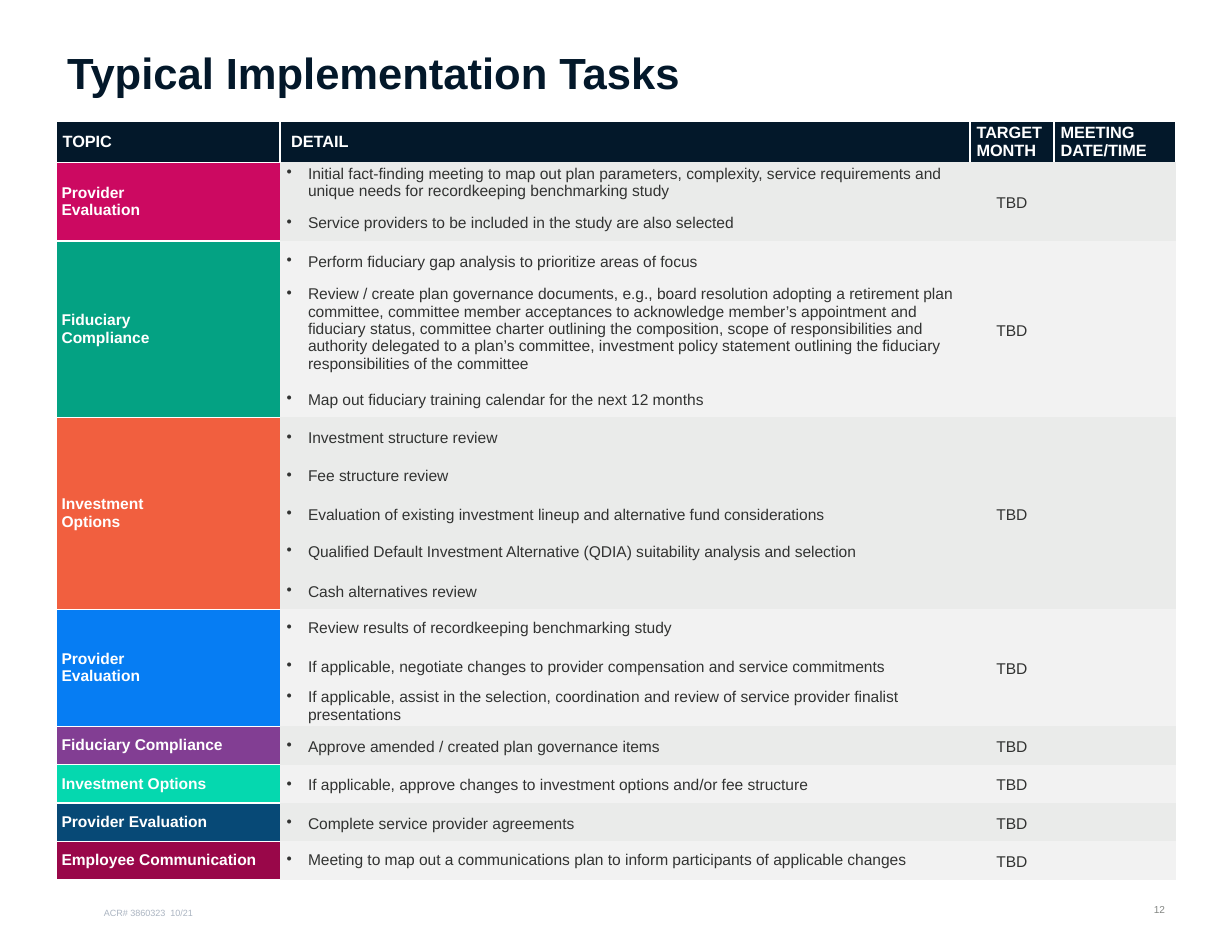
from dataclasses import dataclass

from lxml.etree import SubElement
from pptx import Presentation
from pptx.dml.color import RGBColor
from pptx.enum.text import MSO_ANCHOR, PP_ALIGN
from pptx.oxml.ns import qn
from pptx.util import Inches, Pt


@dataclass(frozen=True)
class Theme:
    font: str = "Arial"
    navy: str = "03182A"
    white: str = "FFFFFF"
    body: str = "323332"
    page: str = "838683"
    footer: str = "AAB4C1"
    bands: tuple = ("EAEBEA", "F2F2F2")
    title_size: float = 28
    header_size: float = 10.5
    body_size: float = 10
    page_size: float = 6.5
    footer_size: float = 5.8


THEME = Theme()
NO_STYLE = "{2D5ABB26-0587-4C30-8999-92F81FD0307C}"
HEADERS = ("TOPIC", "DETAIL", "TARGET MONTH", "MEETING DATE/TIME")
COLUMN_WIDTHS = (2, 6.16, 0.75, 1.09)
HEADER_HEIGHT = 0.37
SINGLE, LOOSE = 1.0, 1.2

# Topic, colour, and its details: text, line spacing and, for a tall row, its height
TASKS = [
    ("Provider\nEvaluation", "CC0961", [
        ("Initial fact-finding meeting to map out plan parameters, complexity, service "
         "requirements and unique needs for recordkeeping benchmarking study", SINGLE, 0.36),
        ("Service providers to be included in the study are also selected", LOOSE),
    ]),
    ("Fiduciary\nCompliance", "04A283", [
        ("Perform fiduciary gap analysis to prioritize areas of focus", LOOSE),
        ("Review / create plan governance documents, e.g., board resolution adopting a "
         "retirement plan committee, committee member acceptances to acknowledge member’s "
         "appointment and fiduciary status, committee charter outlining the composition, "
         "scope of responsibilities and authority delegated to a plan’s committee, "
         "investment policy statement outlining the fiduciary responsibilities of the "
         "committee", SINGLE, 0.89),
        ("Map out fiduciary training calendar for the next 12 months", LOOSE),
    ]),
    ("Investment\nOptions", "F15F3F", [
        ("Investment structure review", LOOSE),
        ("Fee structure review", LOOSE),
        ("Evaluation of existing investment lineup and alternative fund considerations", LOOSE),
        ("Qualified Default Investment Alternative (QDIA) suitability analysis and selection",
         SINGLE),
        ("Cash alternatives review", LOOSE),
    ]),
    ("Provider\nEvaluation", "067DF3", [
        ("Review results of recordkeeping benchmarking study", SINGLE),
        ("If applicable, negotiate changes to provider compensation and service commitments",
         SINGLE),
        ("If applicable, assist in the selection, coordination and review of service provider "
         "finalist presentations", SINGLE, 0.36),
    ]),
    ("Fiduciary Compliance", "823E93", [
        ("Approve amended / created plan governance items", LOOSE)]),
    ("Investment Options", "05D8AF", [
        ("If applicable, approve changes to investment options and/or fee structure", LOOSE)]),
    ("Provider Evaluation", "074976", [("Complete service provider agreements", LOOSE)]),
    ("Employee Communication", "990749", [
        ("Meeting to map out a communications plan to inform participants of applicable changes",
         SINGLE)]),
]


def apply(target, **values):
    for name, value in values.items():
        setattr(target, name, value)


def write(frame, text, size, color, bold=False, bullet=False, **paragraph_format):
    frame.text = text
    for paragraph in frame.paragraphs:
        if bullet:
            add_bullet(paragraph)
        apply(paragraph, **paragraph_format)
        for run in paragraph.runs:
            apply(run.font, name=THEME.font, size=Pt(size), bold=bold)
            run.font.color.rgb = RGBColor.from_string(color)


def add_label(slide, box, text, size, color, anchor, align):
    frame = slide.shapes.add_textbox(*map(Inches, box)).text_frame
    apply(frame, word_wrap=True, vertical_anchor=anchor)
    write(frame, text, size, color, alignment=align)


def set_title(slide, box, text):
    title = slide.shapes.title
    apply(title, **dict(zip(("left", "top", "width", "height"), map(Inches, box))))
    apply(title.text_frame, word_wrap=True, vertical_anchor=MSO_ANCHOR.MIDDLE)
    write(title.text_frame, text, THEME.title_size, THEME.navy, True,
          alignment=PP_ALIGN.LEFT, line_spacing=0.9)


def add_bullet(paragraph):
    properties = paragraph._p.get_or_add_pPr()
    for name, length in {"marL": Inches(0.19), "indent": Inches(-0.19)}.items():
        properties.set(name, str(int(length)))
    SubElement(properties, qn("a:buChar"), char="•")


def add_borders(cell, sides):
    for side in sides:
        line = SubElement(cell._tc.get_or_add_tcPr(), qn(f"a:ln{side}"), w=str(int(Pt(1))))
        fill = SubElement(line, qn("a:solidFill"))
        SubElement(fill, qn("a:srgbClr"), val=THEME.white)


def style_cell(cell, color, borders="", inset_x=0.06, inset_y=0.0):
    add_borders(cell, borders)
    cell.fill.solid()
    cell.fill.fore_color.rgb = RGBColor.from_string(color)
    apply(cell, vertical_anchor=MSO_ANCHOR.MIDDLE,
          margin_left=Inches(inset_x), margin_right=Inches(inset_x),
          margin_top=Inches(inset_y), margin_bottom=Inches(inset_y))


def fill_header(table):
    for column, heading in enumerate(HEADERS):
        cell = table.cell(0, column)
        detail_insets = {"inset_x": 0.1, "inset_y": 0.05} if heading == "DETAIL" else {}
        style_cell(cell, THEME.navy, "LRT" if column else "LRTB", **detail_insets)
        write(cell.text_frame, heading, THEME.header_size, THEME.white, True)


def fill_task(table, first, topic, color, details, band):
    last = first + len(details) - 1
    for row, (text, spacing, *_) in enumerate(details, first):
        for column in range(1, len(HEADERS)):
            style_cell(table.cell(row, column), band)
        write(table.cell(row, 1).text_frame, text, THEME.body_size, THEME.body,
              bullet=True, line_spacing=spacing, space_after=Pt(1))
    if last > first:
        for column in (0, 2, 3):
            table.cell(first, column).merge(table.cell(last, column))
    topic_cell = table.cell(first, 0)
    style_cell(topic_cell, color, "LTB", 0.05, 0.05)
    write(topic_cell.text_frame, topic, THEME.body_size, THEME.white, True)
    write(table.cell(first, 2).text_frame, "TBD", THEME.body_size, THEME.body,
          alignment=PP_ALIGN.CENTER, line_spacing=LOOSE)


def shrink_empty_cells(table):
    """Keep the default size of an empty cell from stretching its row."""
    for cell in table.iter_cells():
        if not cell.text:
            apply(cell, margin_top=0, margin_bottom=0)
            SubElement(cell.text_frame.paragraphs[0]._p, qn("a:endParaRPr"),
                       sz=str(THEME.body_size * 100))


def add_task_table(slide, box):
    details = [detail for _, _, group in TASKS for detail in group]
    fixed = [HEADER_HEIGHT] + [detail[2] if len(detail) > 2 else None for detail in details]
    regular = (box[3] - sum(filter(None, fixed))) / fixed.count(None)
    table = slide.shapes.add_table(len(fixed), len(HEADERS), *map(Inches, box)).table
    apply(table, first_row=False, horz_banding=False)
    table._tbl.tblPr.find(qn("a:tableStyleId")).text = NO_STYLE
    for column, width in zip(table.columns, COLUMN_WIDTHS):
        column.width = Inches(width)
    for row, height in zip(table.rows, fixed):
        row.height = Inches(height or regular)

    fill_header(table)
    first = 1
    for index, (topic, color, group) in enumerate(TASKS):
        fill_task(table, first, topic, color, group, THEME.bands[index % 2])
        first += len(group)
    shrink_empty_cells(table)


def main():
    presentation = Presentation()
    apply(presentation, slide_width=Inches(11), slide_height=Inches(8.5))
    slide = presentation.slides.add_slide(presentation.slide_layouts[5])
    set_title(slide, (0.5, 0.46, 10, 0.42), "Typical Implementation Tasks")
    add_label(slide, (10, 7.93, 0.5, 0.38), "12", THEME.page_size, THEME.page,
              MSO_ANCHOR.MIDDLE, PP_ALIGN.RIGHT)
    add_task_table(slide, (0.5, 1.08, 10, 6.78))
    add_label(slide, (0.83, 8, 4.75, 0.25), "ACR# 3860323  10/21", THEME.footer_size,
              THEME.footer, MSO_ANCHOR.BOTTOM, PP_ALIGN.LEFT)
    presentation.save("out.pptx")


if __name__ == "__main__":
    main()
